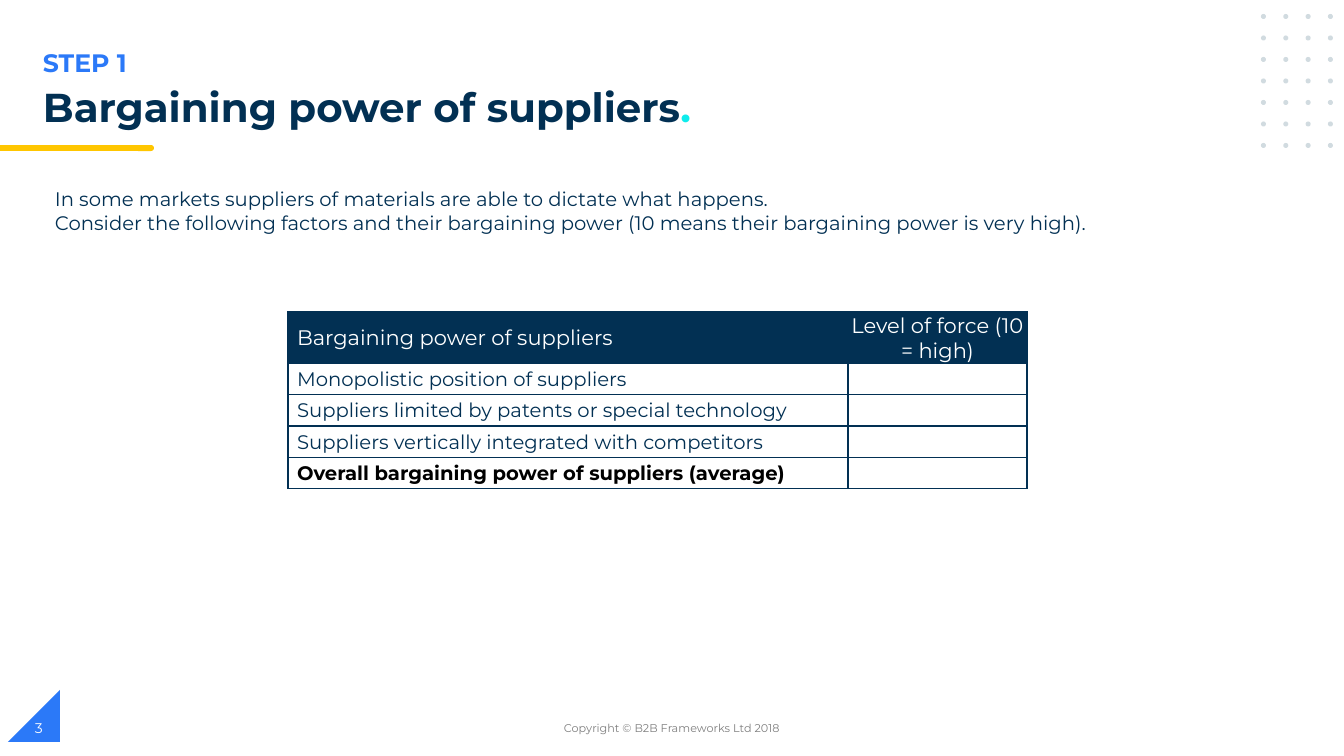
from dataclasses import dataclass
from itertools import product

from lxml.etree import SubElement
from pptx import Presentation
from pptx.dml.color import RGBColor
from pptx.enum.shapes import MSO_SHAPE as Shape
from pptx.enum.text import MSO_ANCHOR as Anchor, PP_ALIGN as Align
from pptx.oxml.ns import qn
from pptx.util import Pt

EMU_PER_PX = 914400 / 100.8


@dataclass(frozen=True)
class Theme:
    font: str = "Montserrat"
    navy: str = "023053"
    blue: str = "2B79F8"
    cyan: str = "0EECEC"
    yellow: str = "FFC600"
    dot: str = "D1DBE0"
    grey: str = "7F7F7F"
    white: str = "FFFFFF"
    black: str = "000000"
    title: float = 28.8
    step: int = 18
    table_head: int = 15
    body: int = 14
    page: int = 10
    footer: int = 8


THEME = Theme()
FACTORS = [
    "Monopolistic position of suppliers",
    "Suppliers limited by patents or special technology",
    "Suppliers vertically integrated with competitors",
]


def px(length):
    return round(length * EMU_PER_PX)


def rgb(colour):
    return RGBColor.from_string(colour)


def style(font, size, colour, bold=False):
    font.name, font.size, font.bold = THEME.font, Pt(size), bold
    font.color.rgb = rgb(colour)


def add_block(slide, kind, box, colour):
    block = slide.shapes.add_shape(kind, *map(px, box))
    block.shadow.inherit = False
    block.fill.solid()
    block.fill.fore_color.rgb = rgb(colour)
    block.line.fill.background()
    return block


def add_text(slide, box, words, size, colour, bold=False, align=Align.LEFT, anchor=Anchor.TOP):
    """Add a wrapping text box and return its paragraph."""
    frame = slide.shapes.add_textbox(*map(px, box)).text_frame
    frame.word_wrap, frame.vertical_anchor = True, anchor
    paragraph = frame.paragraphs[0]
    paragraph.text, paragraph.alignment = words, align
    style(paragraph.font, size, colour, bold)
    return paragraph


def add_dot_grid(slide, box, columns=4, rows=7, dot=5):
    left, top, width, height = box
    column_step = (width - dot) / (columns - 1)
    row_step = (height - dot) / (rows - 1)
    for row, column in product(range(rows), range(columns)):
        place = (left + column * column_step, top + row * row_step, dot, dot)
        add_block(slide, Shape.OVAL, place, THEME.dot)


def add_header(slide, box):
    left, top, width, height = box
    add_text(slide, (left, top, width, 40), "STEP 1", THEME.step, THEME.blue, True)
    title = add_text(slide, (left, top + 41, width, 56), "Bargaining power of suppliers",
                     THEME.title, THEME.navy, True)
    title.line_spacing = 0.9
    full_stop = title.add_run()
    full_stop.text = "."
    full_stop.font.color.rgb = rgb(THEME.cyan)
    bar_top, bar_height = top + height - 6, 6
    add_block(slide, Shape.FLOWCHART_TERMINATOR, (135, bar_top, 19, bar_height), THEME.yellow)
    add_block(slide, Shape.RECTANGLE, (0, bar_top, 142, bar_height), THEME.yellow)


def add_borders(cell):
    properties = cell._tc.get_or_add_tcPr()
    for side in ("lnL", "lnR", "lnT", "lnB"):
        line = SubElement(properties, qn(f"a:{side}"), w=str(Pt(1)))
        fill = SubElement(line, qn("a:solidFill"))
        SubElement(fill, qn("a:srgbClr"), val=THEME.navy)


def fill_cell(cell, words, size, colour, bold=False, align=Align.LEFT, anchor=Anchor.MIDDLE):
    cell.margin_left = cell.margin_right = cell.margin_top = px(1)
    cell.margin_bottom = 0
    cell.vertical_anchor = anchor
    paragraph = cell.text_frame.paragraphs[0]
    paragraph.text, paragraph.alignment = words, align
    if align == Align.LEFT:
        properties = paragraph._p.get_or_add_pPr()
        properties.set("marL", str(px(8)))
        properties.set("indent", "0")
    style(paragraph.font, size, colour, bold)


def add_force_table(slide, box):
    """Score sheet: one factor a row, with an empty cell for its score."""
    left, top, width, height = box
    score_width, head_height = 179, 50
    row_count = len(FACTORS) + 2
    table = slide.shapes.add_table(row_count, 2, *map(px, box)).table
    table.first_row = table.horz_banding = False
    table.columns[0].width = px(width - score_width)
    table.columns[1].width = px(score_width)
    for number, row in enumerate(table.rows):
        is_head = number == 0
        row.height = px(head_height if is_head else (height - head_height) / (row_count - 1))
        for cell in row.cells:
            add_borders(cell)
            if is_head:
                cell.fill.solid()
                cell.fill.fore_color.rgb = rgb(THEME.navy)
            else:
                cell.fill.background()

    fill_cell(table.cell(0, 0), "Bargaining power of suppliers", THEME.table_head, THEME.white)
    fill_cell(table.cell(0, 1), "Level of force (10 = high)", THEME.table_head, THEME.white,
              align=Align.CENTER, anchor=Anchor.BOTTOM)
    for number, factor in enumerate(FACTORS, 1):
        fill_cell(table.cell(number, 0), factor, THEME.body, THEME.navy)
    fill_cell(table.cell(row_count - 1, 0), "Overall bargaining power of suppliers (average)",
              THEME.body, THEME.black, True)
    for number in range(1, row_count):
        fill_cell(table.cell(number, 1), "", THEME.step, THEME.navy, align=Align.CENTER)


def add_footer(slide, box):
    left, top, width, height = box
    corner = add_block(slide, Shape.RIGHT_TRIANGLE, (left, top, 52, height), THEME.blue)
    corner._element.spPr.get_or_add_xfrm().set("flipH", "1")
    line_top, line_height = top + 18, 40
    copyright_width = 454
    add_text(slide, (left + (width - copyright_width) / 2, line_top, copyright_width, line_height),
             "Copyright © B2B Frameworks Ltd 2018", THEME.footer, THEME.grey,
             align=Align.CENTER, anchor=Anchor.MIDDLE)
    add_text(slide, (left + 17, line_top, 302, line_height), "3", THEME.page, THEME.white,
             anchor=Anchor.MIDDLE)


def main():
    deck = Presentation()
    deck.slide_width, deck.slide_height = px(1344), px(756)
    slide = deck.slides.add_slide(deck.slide_layouts[6])
    add_dot_grid(slide, (1261, 14, 72, 134))
    add_header(slide, (33, 42, 910, 109))
    add_text(slide, (45, 182, 1125, 58),
             "In some markets suppliers of materials are able to dictate what happens.\n"
             "Consider the following factors and their bargaining power "
             "(10 means their bargaining power is very high).",
             THEME.body, THEME.navy)
    add_force_table(slide, (288, 312, 739, 162))
    add_footer(slide, (8, 690, 1328, 52))
    deck.save("out.pptx")


if __name__ == "__main__":
    main()
